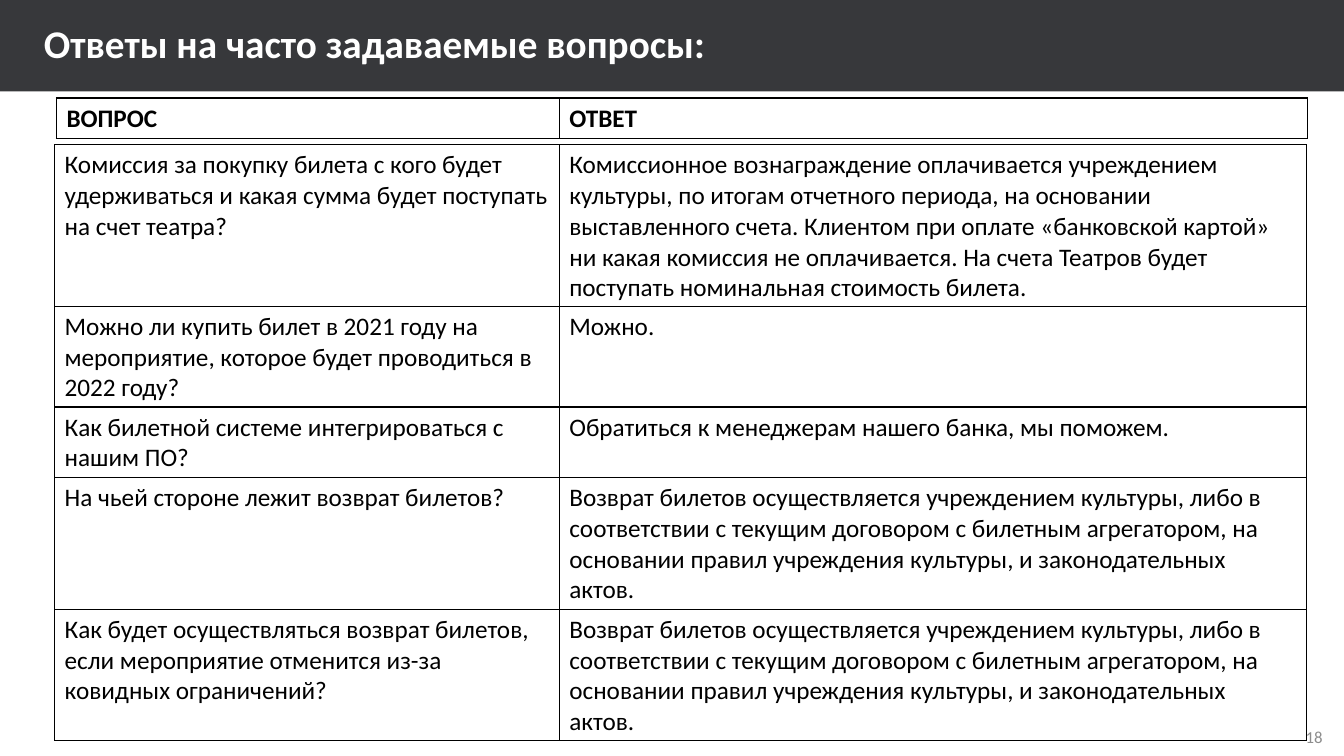
from lxml.etree import SubElement
from pptx import Presentation
from pptx.dml.color import RGBColor
from pptx.enum.shapes import MSO_SHAPE
from pptx.enum.text import MSO_ANCHOR, PP_ALIGN
from pptx.oxml.ns import qn
from pptx.util import Pt

BLACK = RGBColor(0x00, 0x00, 0x00)
WHITE = RGBColor(0xFF, 0xFF, 0xFF)
DARK = RGBColor(0x37, 0x38, 0x3B)
GRAY = RGBColor(0x8C, 0x8C, 0x8C)
FONT = "Calibri"

REFUND = ("Возврат билетов осуществляется учреждением культуры, либо в соответствии "
          "с текущим договором с билетным агрегатором, на основании правил "
          "учреждения культуры, и законодательных актов.")
HEADINGS = [("ВОПРОС", "ОТВЕТ")]
FAQ = [
    ("Комиссия за покупку билета с кого будет удерживаться и какая сумма "
     "будет поступать на счет театра?",
     "Комиссионное вознаграждение оплачивается учреждением культуры, по итогам "
     "отчетного периода, на основании выставленного счета. Клиентом при оплате "
     "«банковской картой» ни какая комиссия не оплачивается. На счета Театров "
     "будет поступать номинальная стоимость билета."),
    ("Можно ли купить билет в 2021 году на мероприятие, которое будет "
     "проводиться в 2022 году?",
     "Можно."),
    ("Как билетной системе интегрироваться с нашим ПО?",
     "Обратиться к менеджерам нашего банка, мы поможем."),
    ("На чьей стороне лежит возврат билетов?", REFUND),
    ("Как будет осуществляться возврат билетов, если мероприятие отменится "
     "из-за ковидных ограничений?", REFUND),
]


def write(tf, text, size=18, color=BLACK, bold=False, align=PP_ALIGN.LEFT, before=0):
    tf.word_wrap = True
    p = tf.paragraphs[0]
    p.alignment = align
    p.space_before = Pt(before)
    r = p.add_run()
    r.text = text
    r.font.name = FONT
    r.font.size = Pt(size)
    r.font.bold = bold
    r.font.color.rgb = color


def add_borders(cell, color=BLACK, width=1):
    tcPr = cell._tc.get_or_add_tcPr()
    for side in ("a:lnL", "a:lnR", "a:lnT", "a:lnB"):
        ln = SubElement(tcPr, qn(side), w=str(Pt(width)))
        fill = SubElement(ln, qn("a:solidFill"))
        SubElement(fill, qn("a:srgbClr"), val=str(color))


def add_header(s, x, y, w, h, title):
    # Dark band
    sp = s.shapes.add_shape(MSO_SHAPE.RECTANGLE, Pt(x), Pt(y), Pt(w), Pt(h))
    sp.shadow.inherit = False
    sp.fill.solid()
    sp.fill.fore_color.rgb = DARK
    sp.line.fill.background()
    # Title
    tf = s.shapes.add_textbox(Pt(x + 30.3), Pt(y + 13.5), Pt(730), Pt(34.5)).text_frame
    tf.margin_left = tf.margin_right = tf.margin_bottom = 0
    tf.margin_top = Pt(0.9)
    write(tf, title, size=28, color=WHITE, bold=True, before=0.9)
    tf.paragraphs[0]._p.get_or_add_pPr().set("marL", str(Pt(1)))


def add_grid(s, x, y, widths, heights, rows, bold=False):
    table = s.shapes.add_table(len(rows), len(widths), Pt(x), Pt(y),
                               Pt(sum(widths)), Pt(sum(heights))).table
    table.first_row = table.horz_banding = False
    for column, width in zip(table.columns, widths):
        column.width = Pt(width)
    for row, height, texts in zip(table.rows, heights, rows):
        row.height = Pt(height)
        for cell, text in zip(row.cells, texts):
            add_borders(cell)
            cell.fill.background()
            write(cell.text_frame, text, bold=bold)


def add_page_number(s, x, y, w, h, number):
    tf = s.shapes.add_textbox(Pt(x), Pt(y), Pt(w), Pt(h)).text_frame
    tf.vertical_anchor = MSO_ANCHOR.MIDDLE
    write(tf, number, size=12, color=GRAY, align=PP_ALIGN.RIGHT)


def main():
    prs = Presentation()
    prs.slide_width, prs.slide_height = Pt(960), Pt(540)
    s = prs.slides.add_slide(prs.slide_layouts[6])
    add_page_number(s, 924.5, 517.7, 27.4, 16.6, "18")
    add_header(s, 0, -0.7, 960, 66, "Ответы на часто задаваемые вопросы:")
    # Questions and answers, then their headings
    add_grid(s, 39, 103.5, [360.5, 533.5], [115, 72, 50, 94, 94], FAQ)
    add_grid(s, 40.3, 70, [359.2, 534.3], [29.2], HEADINGS, bold=True)
    prs.save("out.pptx")


if __name__ == "__main__":
    main()
